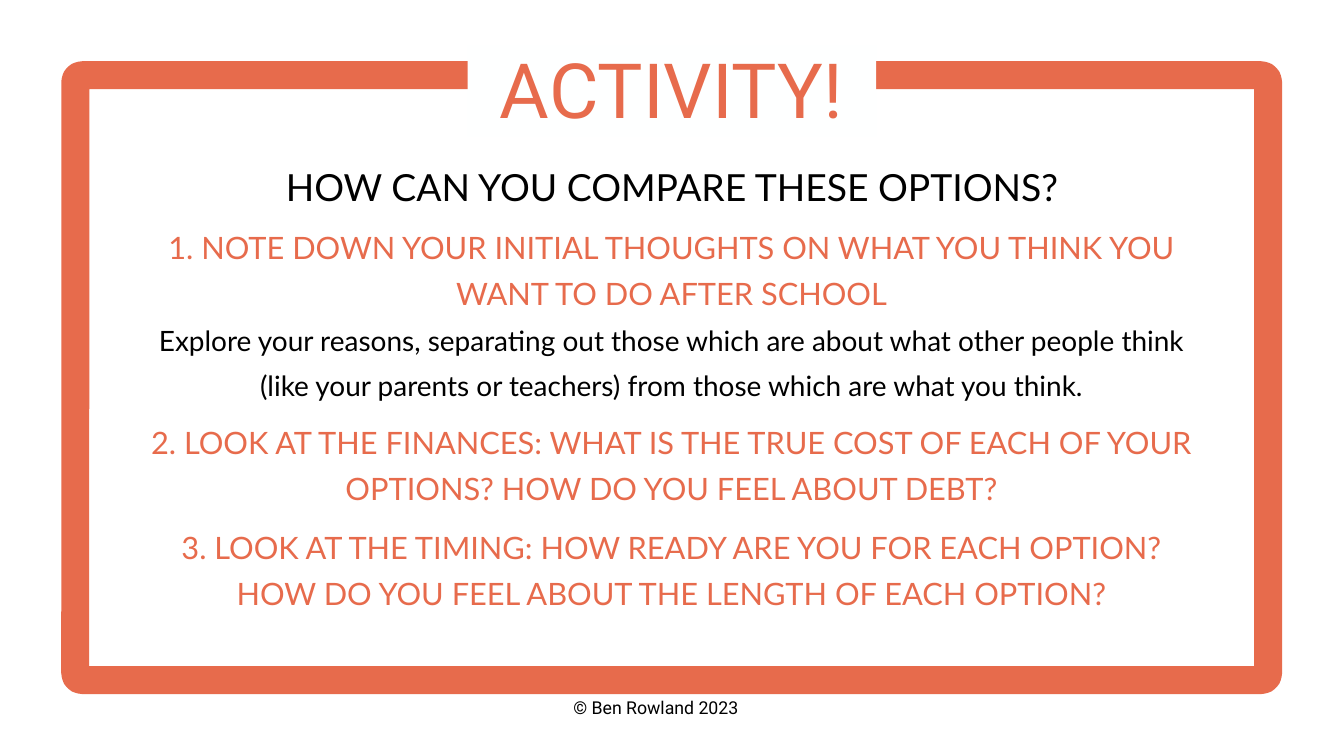
import pptx
import pptx.util
import pptx.dml.color
import pptx.enum.shapes
import pptx.enum.text

Inches = pptx.util.Inches
Pt = pptx.util.Pt
SHAPES = pptx.enum.shapes.MSO_SHAPE

CORAL = "E76B4C"
BLACK = "000000"
WHITE = "FEFFFF"

HEADING = dict(size=33, spacing=49.5, color=CORAL)
DETAIL = dict(size=30, spacing=48, color=BLACK)


def rgb(hex_color):
    return pptx.dml.color.RGBColor.from_string(hex_color)


def add_text_box(slide, left, top, width, height):
    box = slide.shapes.add_textbox(Inches(left), Inches(top), Inches(width), Inches(height))
    frame = box.text_frame
    frame.word_wrap = True
    frame.margin_left = frame.margin_top = frame.margin_right = frame.margin_bottom = 0
    return frame


def write(paragraph, text, *, size, spacing, color, font="Lato"):
    paragraph.alignment = pptx.enum.text.PP_ALIGN.CENTER
    paragraph.line_spacing = Pt(spacing)
    run = paragraph.add_run()
    run.text = text
    run.font.size = Pt(size)
    run.font.name = font
    run.font.color.rgb = rgb(color)


def add_border(slide, left, top, width, height):
    border = slide.shapes.add_shape(
        SHAPES.ROUNDED_RECTANGLE, Inches(left), Inches(top), Inches(width), Inches(height))
    border.adjustments[0] = 0.1 / min(width, height)
    border.shadow.inherit = False
    border.fill.background()
    border.line.color.rgb = rgb(CORAL)
    border.line.width = Pt(30)


def add_title(slide, left, top, width, height):
    """Place the title on a plate that interrupts the border."""
    plate = slide.shapes.add_shape(
        SHAPES.RECTANGLE, Inches(left), Inches(top), Inches(width), Inches(height))
    plate.shadow.inherit = False
    plate.fill.solid()
    plate.fill.fore_color.rgb = rgb(WHITE)
    plate.line.fill.background()
    title = add_text_box(slide, left + 0.22, top + 0.07, width - 0.45, height - 0.07)
    write(title.paragraphs[0], "ACTIVITY!", size=81.6, spacing=89.8, color=CORAL, font="Roboto")


def add_question(slide, left, top, width, height):
    question = add_text_box(slide, left, top, width, height)
    write(question.paragraphs[0], "HOW CAN YOU COMPARE THESE OPTIONS?",
          size=40, spacing=62.8, color=BLACK)


def add_steps(slide, left, top, width, gap):
    """Stack the steps, each as tall as its two-line paragraphs."""
    steps = [
        [("1. NOTE DOWN YOUR INITIAL THOUGHTS ON WHAT YOU THINK YOU WANT TO DO AFTER SCHOOL",
          HEADING),
         ("Explore your reasons, separating out those which are about what other people think "
          "(like your parents or teachers) from those which are what you think.", DETAIL)],
        [("2. LOOK AT THE FINANCES: WHAT IS THE TRUE COST OF EACH OF YOUR OPTIONS? "
          "HOW DO YOU FEEL ABOUT DEBT?", HEADING)],
        [("3. LOOK AT THE TIMING: HOW READY ARE YOU FOR EACH OPTION? "
          "HOW DO YOU FEEL ABOUT THE LENGTH OF EACH OPTION?", HEADING)],
    ]
    for step in steps:
        height = sum(2 * style["spacing"] / 72 for _, style in step)
        frame = add_text_box(slide, left, top, width, height)
        for index, (text, style) in enumerate(step):
            paragraph = frame.add_paragraph() if index else frame.paragraphs[0]
            write(paragraph, text, **style)
        top += height + gap


def add_copyright(slide, left, top, width, height):
    notice = add_text_box(slide, left, top, width, height)
    write(notice.paragraphs[0], "© Ben Rowland 2023",
          size=19, spacing=26.6, color=BLACK, font="Roboto")


def main():
    deck = pptx.Presentation()
    deck.slide_width = Inches(20)
    deck.slide_height = Inches(11.25)
    slide = deck.slides.add_slide(deck.slide_layouts[6])

    add_border(slide, 1.12, 1.12, 17.75, 9)
    add_title(slide, 6.96, 0.68, 6.08, 1.35)
    add_question(slide, 2.22, 2.24, 15.56, 0.82)
    add_steps(slide, 2.11, 3.27, 15.77, gap=0.19)
    add_copyright(slide, 8.51, 10.32, 2.5, 0.35)

    deck.save("out.pptx")


if __name__ == "__main__":
    main()
